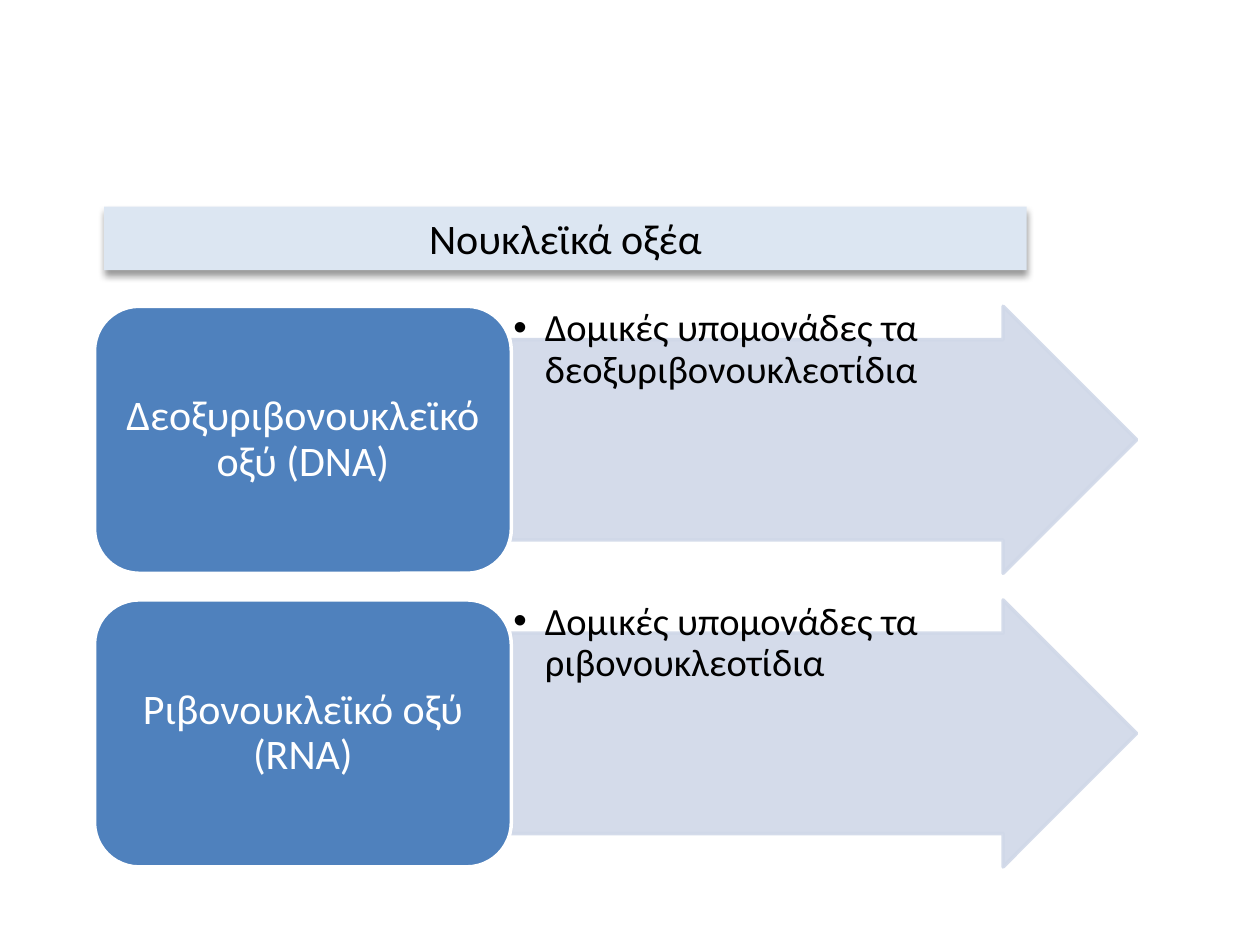
from lxml.etree import SubElement
from pptx import Presentation
from pptx.dml.color import RGBColor
from pptx.enum.shapes import MSO_SHAPE
from pptx.enum.text import MSO_ANCHOR, MSO_AUTO_SIZE, PP_ALIGN
from pptx.oxml.ns import qn
from pptx.util import Pt

HEADING = "Νουκλεϊκά οξέα"
ACIDS = [
    ("Δεοξυριβονουκλεϊκό οξύ (DNA)", "Δομικές υπομονάδες τα δεοξυριβονουκλεοτίδια"),
    ("Ριβονουκλεϊκό οξύ (RNA)", "Δομικές υπομονάδες τα ριβονουκλεοτίδια"),
]

BLACK = RGBColor(0x00, 0x00, 0x00)
WHITE = RGBColor(0xFF, 0xFF, 0xFF)
BLUE = RGBColor(0x4F, 0x81, 0xBD)
PALE_BLUE = RGBColor(0xDC, 0xE6, 0xF2)
ARROW_BLUE = RGBColor(0xD0, 0xD8, 0xE8)

LEFT, TOP = 54, 175
ACID_WIDTH, ARROW_WIDTH = 238.2, 357.3
ROW_HEIGHT, ROW_STEP = 152.6, 167.8


def add_block(slide, preset, box, fill, line=None):
    block = slide.shapes.add_shape(preset, *map(Pt, box))
    block.shadow.inherit = False
    block.fill.solid()
    block.fill.fore_color.rgb = fill
    if line is None:
        block.line.fill.background()
    else:
        block.line.color.rgb = line
        block.line.width = Pt(2)
    return block


def write(block, text, size, color, align, anchor, inset=None, spacing=None):
    frame = block.text_frame
    frame.word_wrap = True
    frame.vertical_anchor = anchor
    if inset is not None:
        frame.margin_left = frame.margin_right = Pt(inset)
        frame.margin_top = frame.margin_bottom = Pt(inset)
    paragraph = frame.paragraphs[0]
    paragraph.text = text
    paragraph.alignment = align
    if spacing is not None:
        paragraph.line_spacing = spacing
    return paragraph, size, color


def set_font(paragraph, size, color):
    paragraph.font.name = "Calibri"
    paragraph.font.size = Pt(size)
    paragraph.font.color.rgb = color


def add_bullet(paragraph):
    properties = paragraph._p.get_or_add_pPr()
    properties.set("marL", str(Pt(18)))
    properties.set("indent", str(-Pt(18)))
    SubElement(properties, qn("a:buFont"), typeface="Arial")
    SubElement(properties, qn("a:buChar"), char="•")


def set_alpha(parent, percent):
    for color in list(parent.iter(qn("a:srgbClr"))):
        SubElement(color, qn("a:alpha"), val=str(percent * 1000))


def add_shadow(block):
    effects = block._element.spPr.find(qn("a:effectLst"))
    shadow = SubElement(effects, qn("a:outerShdw"), blurRad=str(Pt(4)), dist=str(Pt(3)),
                        dir="5400000", rotWithShape="0")
    SubElement(shadow, qn("a:srgbClr"), val="000000")
    set_alpha(shadow, 40)


def add_heading(slide):
    heading = add_block(slide, MSO_SHAPE.RECTANGLE, (59.5, 118.1, 527.2, 36.3), PALE_BLUE)
    add_shadow(heading)
    set_font(*write(heading, HEADING, 24, BLACK, PP_ALIGN.CENTER, MSO_ANCHOR.TOP))
    heading.text_frame.auto_size = MSO_AUTO_SIZE.SHAPE_TO_FIT_TEXT


def add_acid(slide, top, name, units):
    arrow_box = (LEFT + ACID_WIDTH, top, ARROW_WIDTH, ROW_HEIGHT)
    arrow = add_block(slide, MSO_SHAPE.RIGHT_ARROW, arrow_box, ARROW_BLUE, ARROW_BLUE)
    arrow.adjustments[0] = 0.75
    arrow.adjustments[1] = 0.5
    set_alpha(arrow._element.spPr, 90)

    detail = slide.shapes.add_textbox(*map(Pt, arrow_box))
    paragraph, size, color = write(detail, units, 22, BLACK, PP_ALIGN.LEFT, MSO_ANCHOR.TOP,
                                   inset=1.1, spacing=0.9)
    paragraph.level = 1
    add_bullet(paragraph)
    set_font(paragraph, size, color)

    acid = add_block(slide, MSO_SHAPE.ROUNDED_RECTANGLE,
                     (LEFT, top, ACID_WIDTH, ROW_HEIGHT), BLUE, WHITE)
    set_font(*write(acid, name, 24, WHITE, PP_ALIGN.CENTER, MSO_ANCHOR.MIDDLE,
                    inset=0, spacing=0.9))


def main():
    deck = Presentation()
    deck.slide_width, deck.slide_height = Pt(720), Pt(540)
    slide = deck.slides.add_slide(deck.slide_layouts[6])
    add_heading(slide)
    for row, (name, units) in enumerate(ACIDS):
        add_acid(slide, TOP + row * ROW_STEP, name, units)
    deck.save("out.pptx")


if __name__ == "__main__":
    main()
